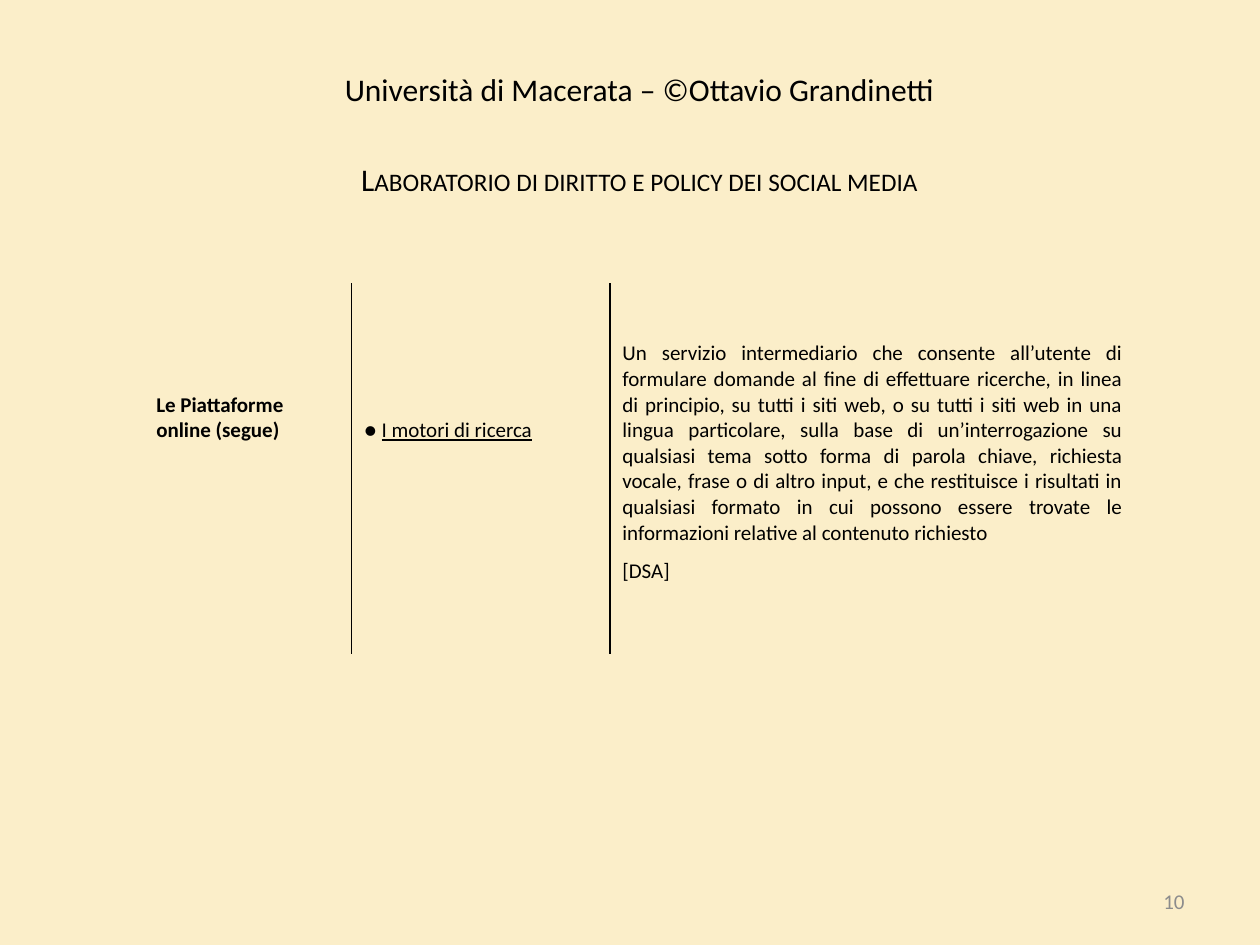
from lxml import etree
from pptx import Presentation
from pptx.dml.color import RGBColor
from pptx.enum.text import MSO_ANCHOR, PP_ALIGN
from pptx.oxml.ns import qn
from pptx.util import Inches, Pt

LEFT, CENTER, RIGHT, JUSTIFY = (
    PP_ALIGN.LEFT, PP_ALIGN.CENTER, PP_ALIGN.RIGHT, PP_ALIGN.JUSTIFY)
MIDDLE = MSO_ANCHOR.MIDDLE

SLIDE_W, SLIDE_H = 10, 7.5
FONT = "Calibri"
PAPER, INK, MUTED = "FBEEC9", "000000", "8C8C8C"
HEADING_SIZE, BODY_SIZE = 18, 12
LINE_SPACING = 1.22
CELL_INSET = 0.05
NO_STYLE_NO_GRID = "{2D5ABB26-0587-4C30-8999-92F81FD0307C}"

COLUMN_WIDTHS = [1.65, 2.05, 4.17]
ROW_HEIGHTS = [0.41, 1.32, 2.13, 0.81]

DEFINITION = (
    "Un servizio intermediario che consente all’utente di formulare domande "
    "al fine di effettuare ricerche, in linea di principio, su tutti i siti "
    "web, o su tutti i siti web in una lingua particolare, sulla base di "
    "un’interrogazione su qualsiasi tema sotto forma di parola chiave, "
    "richiesta vocale, frase o di altro input, e che restituisce i risultati "
    "in qualsiasi formato in cui possono essere trovate le informazioni "
    "relative al contenuto richiesto")


def color(hex_value):
    return RGBColor.from_string(hex_value)


def write(frame, runs, size, align, ink=INK):
    """Fill the first paragraph with (text, font settings) pairs."""
    paragraph = frame.paragraphs[0]
    paragraph.alignment = align
    for text, settings in runs:
        run = paragraph.add_run()
        run.text = text
        font_values = {"name": FONT, "size": Pt(size), **settings}
        for attribute, value in font_values.items():
            setattr(run.font, attribute, value)
        run.font.color.rgb = color(ink)


def fill_cell(cell, runs, size, align, lines_down=0):
    """Write a cell whose text starts a number of lines below its top."""
    cell.margin_top = Inches(
        CELL_INSET + lines_down * size * LINE_SPACING / 72)
    write(cell.text_frame, runs, size, align)


def draw_border(cell, side):
    line = etree.Element(qn(f"a:ln{side}"), w=str(Pt(1)))
    fill = etree.SubElement(line, qn("a:solidFill"))
    etree.SubElement(fill, qn("a:srgbClr"), val=INK)
    cell._tc.get_or_add_tcPr().insert(0, line)


def add_lesson_table(slide, left, top):
    table = slide.shapes.add_table(
        len(ROW_HEIGHTS), len(COLUMN_WIDTHS), Inches(left), Inches(top),
        Inches(sum(COLUMN_WIDTHS)), Inches(sum(ROW_HEIGHTS))).table
    table.first_row = table.horz_banding = False
    table._tbl.tblPr.find(qn("a:tableStyleId")).text = NO_STYLE_NO_GRID
    for column, width in zip(table.columns, COLUMN_WIDTHS):
        column.width = Inches(width)
    for row, height in zip(table.rows, ROW_HEIGHTS):
        row.height = Inches(height)
    for cell in table.iter_cells():
        cell.fill.background()

    for heading_row in (0, 1):
        table.cell(heading_row, 0).merge(table.cell(heading_row, 2))
    for topic_column, side in ((0, "R"), (1, "L")):
        table.cell(2, topic_column).merge(table.cell(3, topic_column))
        for row in (2, 3):
            draw_border(table.cell(row, topic_column), side)

    course = table.cell(1, 0)
    fill_cell(table.cell(0, 0),
              [("Università di Macerata – ©Ottavio Grandinetti", {})],
              HEADING_SIZE, CENTER)
    fill_cell(course,
              [("Laboratorio di diritto e policy dei social media", {})],
              HEADING_SIZE, CENTER, lines_down=1)
    course.text_frame.paragraphs[0].runs[0].font._rPr.set("cap", "small")
    fill_cell(table.cell(2, 0),
              [("Le Piattaforme online (segue)", {"bold": True})],
              BODY_SIZE, LEFT, lines_down=4)
    fill_cell(table.cell(2, 1),
              [("● ", {}), ("I motori di ricerca", {"underline": True})],
              BODY_SIZE, LEFT, lines_down=5)
    fill_cell(table.cell(2, 2), [(DEFINITION, {})],
              BODY_SIZE, JUSTIFY, lines_down=2)
    fill_cell(table.cell(3, 2), [("[DSA]", {})], BODY_SIZE, JUSTIFY)


def add_page_number(slide, left, top, width, height):
    frame = slide.shapes.add_textbox(
        Inches(left), Inches(top), Inches(width), Inches(height)).text_frame
    frame.word_wrap = True
    frame.vertical_anchor = MIDDLE
    write(frame, [("10", {})], BODY_SIZE, RIGHT, MUTED)


def main():
    deck = Presentation()
    deck.slide_width, deck.slide_height = Inches(SLIDE_W), Inches(SLIDE_H)
    slide = deck.slides.add_slide(deck.slide_layouts[6])
    slide.background.fill.solid()
    slide.background.fill.fore_color.rgb = color(PAPER)
    add_page_number(slide, 7.17, 6.95, 2.33, 0.4)
    add_lesson_table(slide, 1.14, 0.52)
    deck.save("out.pptx")


if __name__ == "__main__":
    main()
